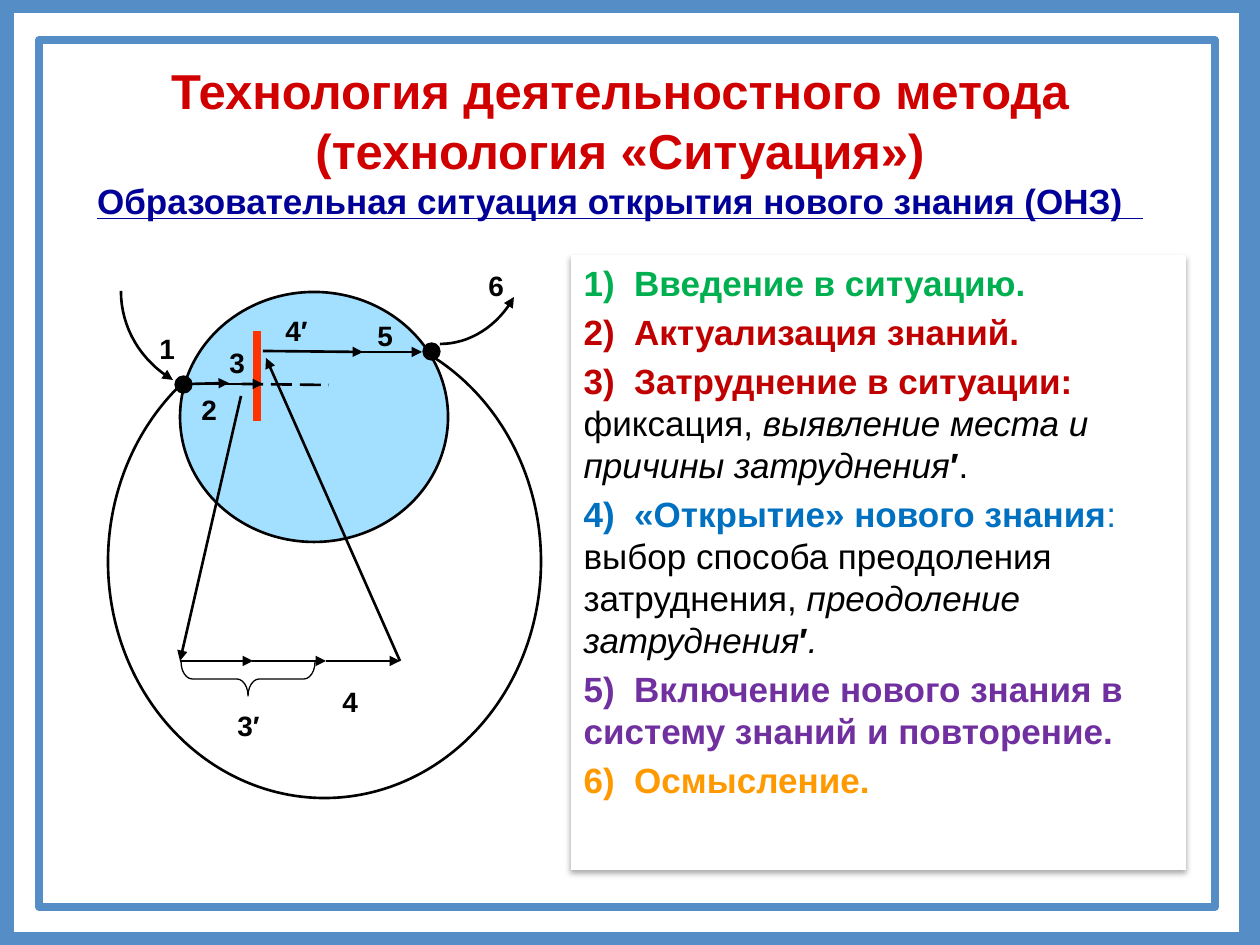
from lxml import etree
from pptx import Presentation
from pptx.dml.color import RGBColor
from pptx.enum.dml import MSO_LINE
from pptx.enum.shapes import MSO_CONNECTOR, MSO_SHAPE
from pptx.enum.text import MSO_ANCHOR, MSO_AUTO_SIZE, PP_ALIGN
from pptx.oxml.ns import qn
from pptx.util import Emu, Pt

PX = 914400 / 126
STRAIGHT = MSO_CONNECTOR.STRAIGHT
OVAL, RECT, BRACE = MSO_SHAPE.OVAL, MSO_SHAPE.RECTANGLE, MSO_SHAPE.RIGHT_BRACE
LONG_DASH = MSO_LINE.LONG_DASH
CENTER, TOP, NO_FIT = PP_ALIGN.CENTER, MSO_ANCHOR.TOP, MSO_AUTO_SIZE.NONE
BLACK, WHITE, FRAME = "000000", "FFFFFF", "558EC7"
rgb = RGBColor.from_string


def px(*values):
    return [Emu(round(v * PX)) for v in values]


def stroke(s, color, width, arrow=False):
    s.line.color.rgb = rgb(color)
    s.line.width = Pt(width)
    if arrow:
        ln = s.element.spPr.find(qn("a:ln"))
        etree.SubElement(ln, qn("a:tailEnd"), type="triangle")


prs = Presentation()
prs.slide_width, prs.slide_height = px(1260, 945)
slide = prs.slides.add_slide(prs.slide_layouts[1])
shapes = slide.shapes

title = shapes.title
title.left, title.top, title.width, title.height = px(64, 58, 1112, 170)
title.fill.solid()
title.fill.fore_color.rgb = rgb(WHITE)
tf = title.text_frame
tf.auto_size = NO_FIT
tf.vertical_anchor = TOP
heading = [
    ("Технология деятельностного метода", 28, "D00000", False),
    ("(технология «Ситуация»)", 28, "D00000", False),
    ("Образовательная ситуация открытия нового знания (ОНЗ)  ", 20, "000099", True),
]
for i, (text, size, color, underline) in enumerate(heading):
    p = tf.add_paragraph() if i else tf.paragraphs[0]
    p.text = text
    p.alignment = CENTER
    p.font.name, p.font.size, p.font.bold = "Arial", Pt(size), True
    p.font.color.rgb = rgb(color)
    p.font.underline = underline
tf.paragraphs[0].line_spacing = 0.96

body = slide.placeholders[1]
body.left, body.top, body.width, body.height = px(571, 255, 615, 615)
body.fill.solid()
body.fill.fore_color.rgb = rgb(WHITE)
effects = etree.SubElement(body.element.spPr, qn("a:effectLst"))
shadow = etree.SubElement(effects, qn("a:outerShdw"), blurRad=str(Pt(3.5)),
                          dist=str(Pt(2.2)), dir="5400000", rotWithShape="0")
tint = etree.SubElement(shadow, qn("a:srgbClr"), val=BLACK)
etree.SubElement(tint, qn("a:alpha"), val="32000")
steps = [
    [("1)  Введение в ситуацию.", "00B050", True, False)],
    [("2)  Актуализация знаний.", "C00000", True, False)],
    [("3)  Затруднение в ситуации: ", "C00000", True, False),
     ("фиксация, ", BLACK, False, False),
     ("выявление места и причины затруднения", BLACK, False, True),
     ("′", BLACK, True, False),
     (".", BLACK, False, False)],
    [("4)  «Открытие» нового знания", "0070C0", True, False),
     (": ", "0070C0", False, False),
     ("выбор способа преодоления затруднения, ", BLACK, False, False),
     ("преодоление затруднения", BLACK, False, True),
     ("′", BLACK, True, False),
     (".", BLACK, False, True)],
    [("5)  Включение нового знания в систему знаний и повторение.", "7030A0", True, False)],
    [("6)  Осмысление.", "FF9900", True, False)],
]
tf = body.text_frame
tf.auto_size = NO_FIT
for i, runs in enumerate(steps):
    p = tf.add_paragraph() if i else tf.paragraphs[0]
    p.font.name, p.font.size = "Arial", Pt(20)
    p.space_before, p.space_after = Pt(0), Pt(4)
    pPr = p._p.get_or_add_pPr()
    pPr.set("marL", "0")
    pPr.set("indent", "0")
    pPr.insert_element_before(etree.Element(qn("a:buNone")), "a:tabLst", "a:defRPr", "a:extLst")
    for text, color, bold, italic in runs:
        r = p.add_run()
        r.text = text
        r.font.bold, r.font.italic = bold, italic
        r.font.color.rgb = rgb(color)

outlines = [
    (OVAL, (108, 325, 433, 473), None, BLACK, 1.5),
    (OVAL, (180, 292, 268, 250), "A3E0FF", BLACK, 1.5),
    (OVAL, (423, 343, 17, 17), BLACK, BLACK, 0.75),
    (OVAL, (175, 376, 17, 17), BLACK, BLACK, 0.75),
    (BRACE, (231, 612, 34, 134), None, BLACK, 0.75),
    (RECT, (1, 0, 1251, 945), None, FRAME, 15),
    (RECT, (39, 40, 1176, 867), None, FRAME, 4.5),
]
for kind, box, fill, color, width in outlines:
    s = shapes.add_shape(kind, *px(*box))
    s.shadow.inherit = False
    if fill:
        s.fill.solid()
        s.fill.fore_color.rgb = rgb(fill)
    else:
        s.fill.background()
    stroke(s, color, width)
    if kind == BRACE:
        s.rotation = 90
        s.adjustments[0] = 0.33

lines = [
    (257, 331, 257, 421, "FF3300", 4.5, False, None),
    (242, 384, 329, 385, BLACK, 1.5, False, LONG_DASH),
    (263, 351, 363, 352, BLACK, 1.5, True, None),
    (335, 352, 422, 352, BLACK, 1.5, True, None),
    (190, 384, 229, 383, BLACK, 1.5, True, None),
    (210, 384, 263, 384, BLACK, 1.5, True, None),
    (180, 661, 253, 661, BLACK, 1.5, True, None),
    (252, 661, 326, 661, BLACK, 1.5, True, None),
    (326, 661, 400, 661, BLACK, 1.5, True, None),
    (241, 396, 180, 661, BLACK, 1.5, True, None),
    (400, 661, 266, 358, BLACK, 1.5, True, None),
]
for x1, y1, x2, y2, color, width, arrow, dash in lines:
    s = shapes.add_connector(STRAIGHT, *px(x1, y1, x2, y2))
    stroke(s, color, width, arrow)
    if dash:
        s.line.dash_style = dash
    etree.SubElement(s.element.spPr, qn("a:effectLst"))

curves = [
    ((121, 291), (121, 328), (141, 361), (173, 380)),
    ((440, 344), (470, 344), (498, 326), (514, 297)),
]
for curve in curves:
    points = []
    for k in range(17):
        t = k / 16
        weights = ((1 - t) ** 3, 3 * t * (1 - t) ** 2, 3 * t * t * (1 - t), t ** 3)
        points.append(px(*(sum(w * c for w, c in zip(weights, axis)) for axis in zip(*curve))))
    builder = shapes.build_freeform(*points[0])
    builder.add_line_segments(points[1:], close=False)
    s = builder.convert_to_shape()
    s.shadow.inherit = False
    s.fill.background()
    stroke(s, BLACK, 1.5, True)

labels = [
    ("1", 147, 325, 83, 74),
    ("2", 189, 386, 57, 74),
    ("3", 217, 339, 49, 63),
    ("3′", 225, 702, 52, 68),
    ("4", 330, 678, 76, 68),
    ("4′", 273, 307, 57, 24),
    ("5", 365, 312, 82, 25),
    ("6", 476, 262, 50, 63),
]
for text, *box in labels:
    s = shapes.add_textbox(*px(*box))
    tf = s.text_frame
    tf.word_wrap = True
    p = tf.paragraphs[0]
    p.text = text
    p.font.name, p.font.size, p.font.bold = "Arial", Pt(16), True
    p.font.color.rgb = rgb(BLACK)

prs.save("out.pptx")
